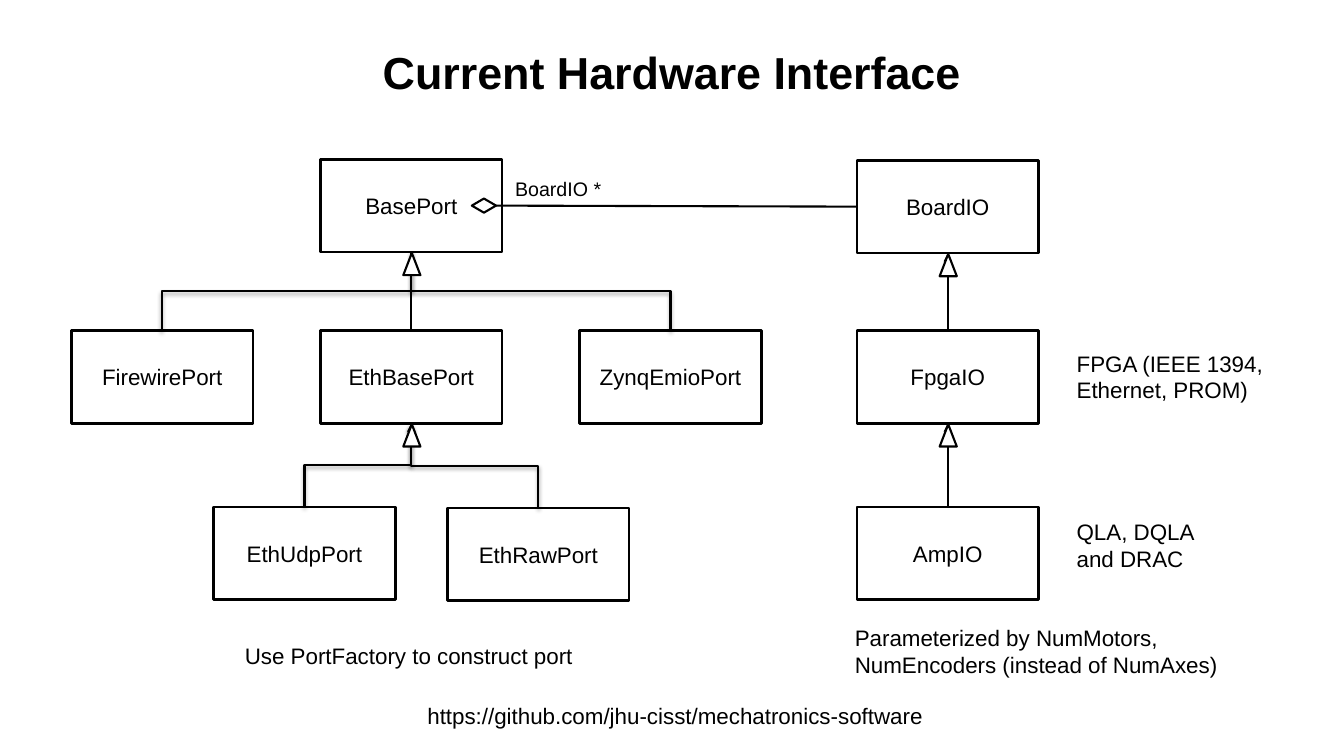
from typing import NamedTuple

from lxml.etree import SubElement
from pptx import Presentation
from pptx.dml.color import RGBColor
from pptx.enum.shapes import MSO_CONNECTOR as Link, MSO_SHAPE as Preset
from pptx.enum.text import MSO_ANCHOR as Anchor, MSO_AUTO_SIZE as AutoSize, PP_ALIGN as Align
from pptx.oxml.ns import qn
from pptx.shapes.autoshape import Shape
from pptx.shapes.connector import Connector
from pptx.slide import Slide
from pptx.text.text import TextFrame
from pptx.util import Emu, Pt

PX = 9144  # 100 px to the inch
BLACK, WHITE = "000000", "FFFFFF"
BOX_WIDTH, BOX_HEIGHT = 180, 92
TOP, LEFT, BOTTOM = 0, 1, 2


class ClassBox(NamedTuple):
    name: str
    left: int
    top: int
    side_inset: int = 10


class Inheritance(NamedTuple):
    child: str
    parent: str
    arrow: bool = True


class Note(NamedTuple):
    text: str
    left: int
    top: int
    width: int
    height: int
    size: int = 16
    wrap: bool = True


CLASSES = [
    ClassBox("BasePort", 318, 158),
    ClassBox("BoardIO", 850, 159),
    ClassBox("FpgaIO", 850, 328),
    ClassBox("AmpIO", 850, 503),
    ClassBox("FirewirePort", 71, 328, 0),
    ClassBox("EthBasePort", 318, 328),
    ClassBox("EthUdpPort", 212, 503),
    ClassBox("EthRawPort", 444, 504),
    ClassBox("ZynqEmioPort", 575, 328, 0),
]
INHERITANCES = [
    Inheritance("FirewirePort", "BasePort", False),
    Inheritance("ZynqEmioPort", "BasePort", False),
    Inheritance("EthRawPort", "EthBasePort"),
    Inheritance("EthUdpPort", "EthBasePort"),
    Inheritance("EthBasePort", "BasePort", False),
    Inheritance("FpgaIO", "BoardIO"),
    Inheritance("AmpIO", "FpgaIO"),
]
NOTES = [
    Note("BoardIO *", 501, 171, 142, 34, 14),
    Note("Use PortFactory to construct port", 233, 632, 395, 37),
    Note("Parameterized by NumMotors, NumEncoders (instead of NumAxes)", 838, 614, 383, 64),
    Note("https://github.com/jhu-cisst/mechatronics-software", 414, 692, 518, 37, wrap=False),
    Note("QLA, DQLA and DRAC", 1058, 509, 163, 64),
    Note("FPGA (IEEE 1394, Ethernet, PROM)", 1058, 342, 215, 64),
]


def px(length: float) -> Emu:
    return Emu(round(length * PX))


def rgb(colour: str) -> RGBColor:
    return RGBColor.from_string(colour)


def write(frame: TextFrame, text: str, size: int, align: Align, bold: bool = False) -> None:
    frame.text = text
    para = frame.paragraphs[0]
    para.alignment = align
    font = para.runs[0].font
    font.name, font.size, font.bold = "Arial", Pt(size), bold
    font.color.rgb = rgb(BLACK)


def add_outline(page: Slide, preset: Preset, left: int, top: int,
                width: int, height: int, weight: float) -> Shape:
    """Add a white shape with a black outline."""
    shape = page.shapes.add_shape(preset, px(left), px(top), px(width), px(height))
    shape.shadow.inherit = False
    shape.fill.solid()
    shape.fill.fore_color.rgb = rgb(WHITE)
    shape.line.color.rgb = rgb(BLACK)
    shape.line.width = Pt(weight)
    return shape


def add_class(page: Slide, item: ClassBox) -> Shape:
    box = add_outline(page, Preset.RECTANGLE, item.left, item.top, BOX_WIDTH, BOX_HEIGHT, 2)
    frame = box.text_frame
    frame.word_wrap = True
    frame.vertical_anchor = Anchor.MIDDLE
    frame.margin_left = frame.margin_right = px(item.side_inset)
    write(frame, item.name, 16, Align.CENTER)
    return box


def style_connector(connector: Connector, arrow: bool, shadow: bool) -> None:
    connector.line.color.rgb = rgb(BLACK)
    connector.line.width = Pt(1.5)
    properties = connector._element.spPr
    if arrow:
        SubElement(properties.find(qn("a:ln")), qn("a:tailEnd"), type="triangle")
    effects = SubElement(properties, qn("a:effectLst"))
    if shadow:
        outer = SubElement(effects, qn("a:outerShdw"), blurRad=str(Pt(3.1)),
                           dist=str(Pt(1.6)), dir="5400000", rotWithShape="0")
        colour = SubElement(outer, qn("a:srgbClr"), val=BLACK)
        SubElement(colour, qn("a:alpha"), val="38000")


def turn_elbow(connector: Connector, start: tuple[int, int], end: tuple[int, int]) -> None:
    """Rotate an elbow so that it leaves and arrives vertically, going up."""
    run, rise = abs(end[0] - start[0]), start[1] - end[1]
    connector.left = Emu((start[0] + end[0] - rise) // 2)
    connector.top = Emu((start[1] + end[1] - run) // 2)
    connector.width, connector.height = Emu(rise), Emu(run)
    from_left = start[0] < end[0]
    frame = connector._element.spPr.find(qn("a:xfrm"))
    frame.set("rot", "5400000" if from_left else "16200000")
    frame.set("flipH", "1" if from_left else "0")
    frame.set("flipV", "1")


def add_inheritance(page: Slide, child: Shape, parent: Shape, arrow: bool) -> None:
    start = (child.left + child.width // 2, child.top)
    end = (parent.left + parent.width // 2, parent.top + parent.height)
    bent = start[0] != end[0]
    connector = page.shapes.add_connector(Link.ELBOW if bent else Link.STRAIGHT, *start, *end)
    connector.begin_connect(child, TOP)
    connector.end_connect(parent, BOTTOM)
    if bent:
        turn_elbow(connector, start, end)
    style_connector(connector, arrow, bent)


def add_note(page: Slide, note: Note) -> None:
    box = page.shapes.add_textbox(px(note.left), px(note.top), px(note.width), px(note.height))
    frame = box.text_frame
    frame.word_wrap = note.wrap
    frame.auto_size = AutoSize.SHAPE_TO_FIT_TEXT
    write(frame, note.text, note.size, Align.LEFT)


def main() -> None:
    deck = Presentation()
    deck.slide_width, deck.slide_height = px(1333), px(750)
    page = deck.slides.add_slide(deck.slide_layouts[5])

    title = page.shapes.title
    title.left, title.top, title.width, title.height = px(100), px(25), px(1133), px(92)
    title.text_frame.vertical_anchor = Anchor.MIDDLE
    write(title.text_frame, "Current Hardware Interface", 32, Align.CENTER, bold=True)

    boxes = {item.name: add_class(page, item) for item in CLASSES}
    for link in INHERITANCES:
        add_inheritance(page, boxes[link.child], boxes[link.parent], link.arrow)

    aggregation = page.shapes.add_connector(Link.STRAIGHT, px(850), px(205), px(492), px(204))
    aggregation.begin_connect(boxes["BoardIO"], LEFT)
    style_connector(aggregation, arrow=False, shadow=False)
    add_outline(page, Preset.FLOWCHART_DECISION, 468, 197, 24, 14, 1.5)

    places = {item.name: item for item in CLASSES}
    for parent in dict.fromkeys(link.parent for link in INHERITANCES):
        place = places[parent]
        add_outline(page, Preset.FLOWCHART_EXTRACT, place.left + BOX_WIDTH // 2 - 8,
                    place.top + BOX_HEIGHT + 1, 17, 22, 1.5)

    for note in NOTES:
        add_note(page, note)
    deck.save("out.pptx")


if __name__ == "__main__":
    main()
